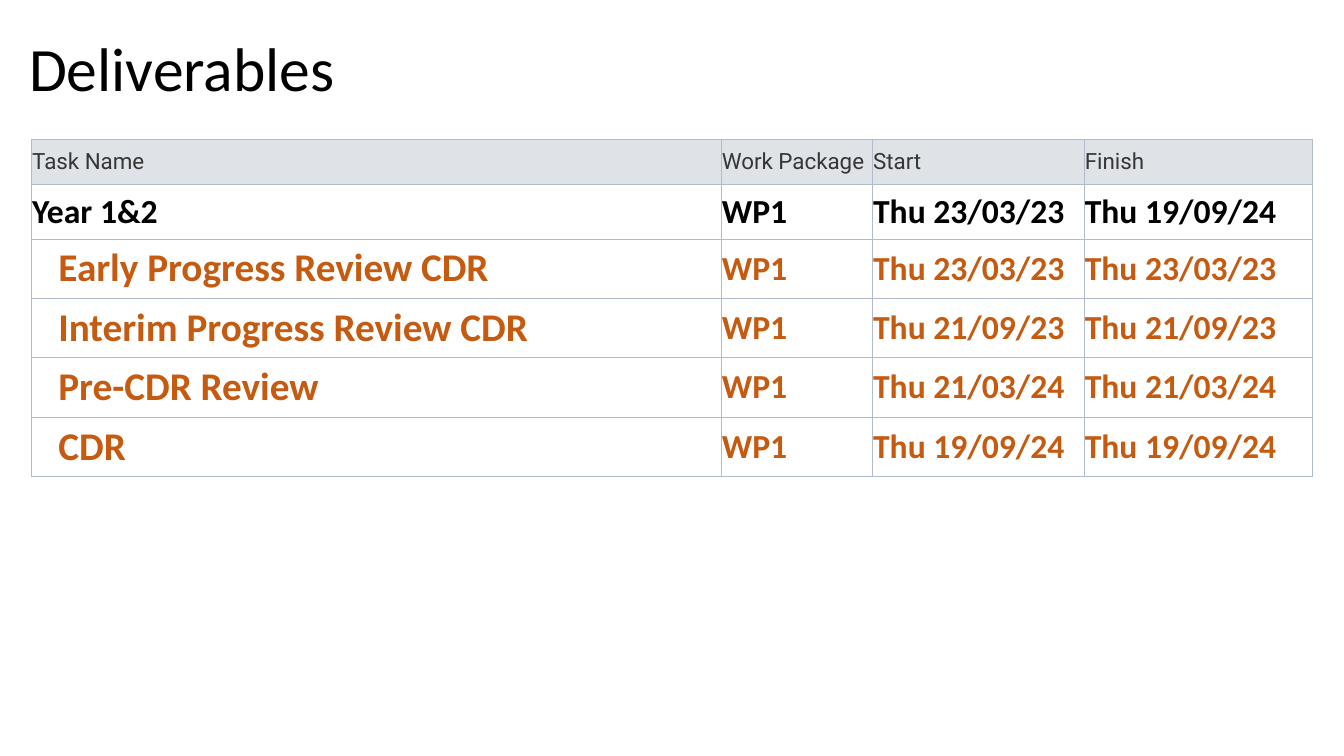
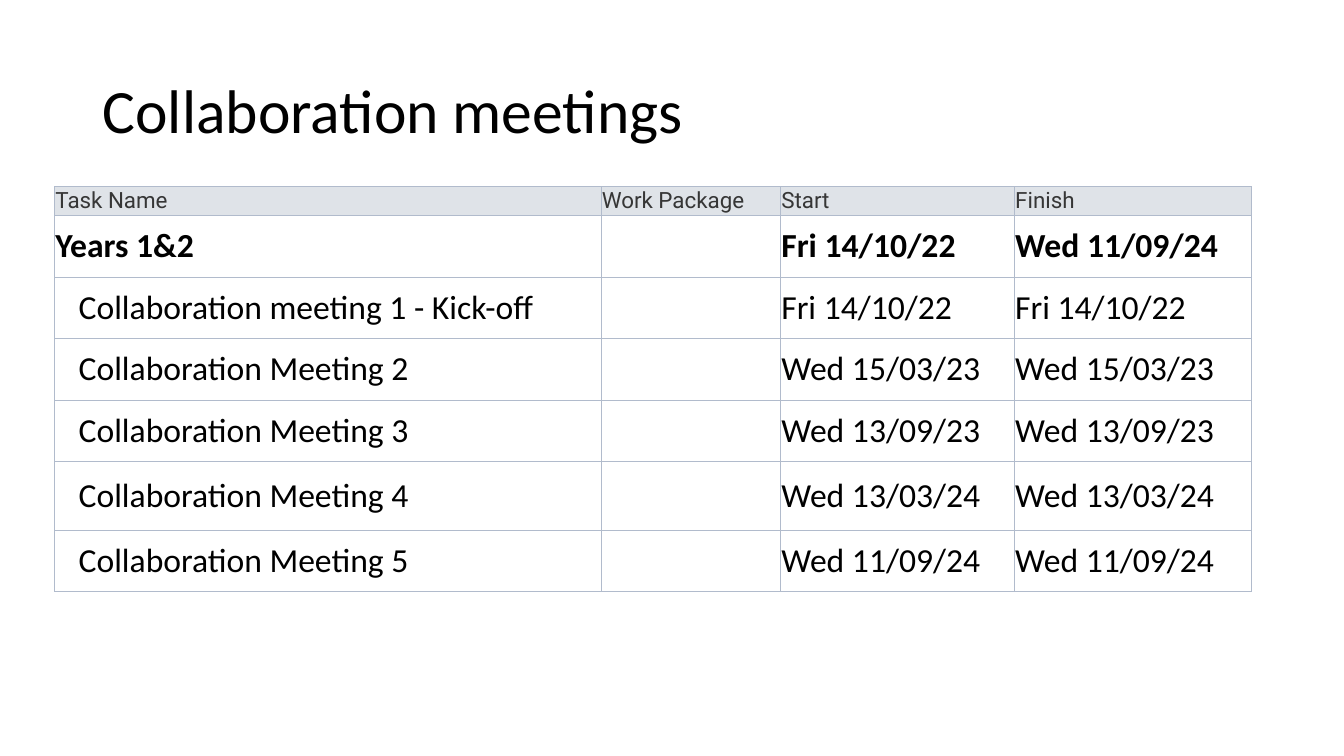
"""Build two project schedule slides: deliverables and collaboration meetings."""
import pptx
import pptx.dml.color
import pptx.enum.text
import pptx.oxml
import pptx.oxml.ns
import pptx.util

Inches = pptx.util.Inches
Pt = pptx.util.Pt
RGBColor = pptx.dml.color.RGBColor
MIDDLE = pptx.enum.text.MSO_ANCHOR.MIDDLE

BLACK = RGBColor(0x00, 0x00, 0x00)
WHITE = RGBColor(0xFF, 0xFF, 0xFF)
ORANGE = RGBColor(0xC5, 0x5A, 0x11)
HEADER_TEXT = RGBColor(0x36, 0x36, 0x36)
HEADER_FILL = RGBColor(0xDF, 0xE3, 0xE8)
BORDER = RGBColor(0xB1, 0xBB, 0xCC)
BORDER_POINTS = 0.5
CELL_INSET = 0.01

HEADINGS = ("Task Name", "Work Package", "Start", "Finish")
HEADER_STYLE = dict(font="Roboto", size=16, color=HEADER_TEXT, bold=False)
SUMMARY_STYLE = dict(font="Calibri", size=24, color=BLACK, bold=True)

SCHEDULES = [
    dict(
        title="Deliverables",
        title_box=(0.19, 0.21, 11.5, 0.99),
        corner=(0.31, 1.38),
        columns=(6.84, 1.5, 2.1, 2.27),
        heights=(0.45, 0.54, 0.59, 0.59, 0.59, 0.59),
        task_style=dict(SUMMARY_STYLE, color=ORANGE),
        name_size=28,
        name_indent=0.26,
        summary=("Year 1&2", "WP1", "Thu 23/03/23", "Thu 19/09/24"),
        package="WP1",
        tasks=[
            ("Early Progress Review CDR", "Thu 23/03/23"),
            ("Interim Progress Review CDR", "Thu 21/09/23"),
            ("Pre-CDR Review", "Thu 21/03/24"),
            ("CDR", "Thu 19/09/24"),
        ],
    ),
    dict(
        title="Collaboration meetings",
        title_box=(0.92, 0.4, 11.5, 1.45),
        corner=(0.54, 1.85),
        columns=(5.42, 1.78, 2.32, 2.35),
        heights=(0.29, 0.61, 0.61, 0.61, 0.61, 0.68, 0.61),
        task_style=dict(SUMMARY_STYLE, bold=False),
        name_size=24,
        name_indent=0.23,
        summary=("Years 1&2", "", "Fri 14/10/22", "Wed 11/09/24"),
        package="",
        tasks=[
            ("Collaboration meeting 1 - Kick-off", "Fri 14/10/22"),
            ("Collaboration Meeting 2", "Wed 15/03/23"),
            ("Collaboration Meeting 3", "Wed 13/09/23"),
            ("Collaboration Meeting 4", "Wed 13/03/24"),
            ("Collaboration Meeting 5", "Wed 11/09/24"),
        ],
    ),
]


def add_span(para, text, font, size, color, bold):
    span = para.add_run()
    span.text = text
    span.font.name = font
    span.font.size = Pt(size)
    span.font.color.rgb = color
    span.font.bold = bold


def add_title(page, text, bounds):
    box = page.shapes.add_textbox(*map(Inches, bounds))
    frame = box.text_frame
    frame.word_wrap = True
    frame.vertical_anchor = MIDDLE
    para = frame.paragraphs[0]
    para.line_spacing = 0.9
    add_span(para, text, "Calibri", 44, BLACK, False)


def add_borders(cell):
    properties = cell._tc.get_or_add_tcPr()
    for side in ("lnL", "lnR", "lnT", "lnB"):
        properties.append(pptx.oxml.parse_xml(
            f'<a:{side} {pptx.oxml.ns.nsdecls("a")} w="{Pt(BORDER_POINTS)}">'
            f'<a:solidFill><a:srgbClr val="{BORDER}"/></a:solidFill>'
            f'</a:{side}>'))


def fill_cell(cell, text, style, fill, indent=0):
    cell.margin_left = cell.margin_right = Inches(CELL_INSET)
    cell.margin_top = cell.margin_bottom = Inches(CELL_INSET)
    cell.vertical_anchor = MIDDLE
    add_borders(cell)
    cell.fill.solid()
    cell.fill.fore_color.rgb = fill
    para = cell.text_frame.paragraphs[0]
    if indent:
        para._p.get_or_add_pPr().set("marL", str(Inches(indent)))
    if text:
        add_span(para, text, **style)


def add_schedule(page, schedule):
    columns, heights = schedule["columns"], schedule["heights"]
    bounds = (*schedule["corner"], sum(columns), sum(heights))
    table = page.shapes.add_table(
        len(heights), len(columns), *map(Inches, bounds)).table
    table.first_row = table.horz_banding = False
    for column, width in zip(table.columns, columns):
        column.width = Inches(width)
    for row, height in zip(table.rows, heights):
        row.height = Inches(height)

    for cell, heading in zip(table.rows[0].cells, HEADINGS):
        fill_cell(cell, heading, HEADER_STYLE, HEADER_FILL)
    for cell, text in zip(table.rows[1].cells, schedule["summary"]):
        fill_cell(cell, text, SUMMARY_STYLE, WHITE)

    style = schedule["task_style"]
    name_style = dict(style, size=schedule["name_size"])
    for index, (name, date) in enumerate(schedule["tasks"], start=2):
        first, *others = table.rows[index].cells
        fill_cell(first, name, name_style, WHITE, schedule["name_indent"])
        for cell, text in zip(others, (schedule["package"], date, date)):
            fill_cell(cell, text, style, WHITE)


def main():
    deck = pptx.Presentation()
    deck.slide_width = Inches(13.33)
    deck.slide_height = Inches(7.5)
    for schedule in SCHEDULES:
        page = deck.slides.add_slide(deck.slide_layouts[6])
        add_title(page, schedule["title"], schedule["title_box"])
        add_schedule(page, schedule)
    deck.save("out.pptx")


if __name__ == "__main__":
    main()
